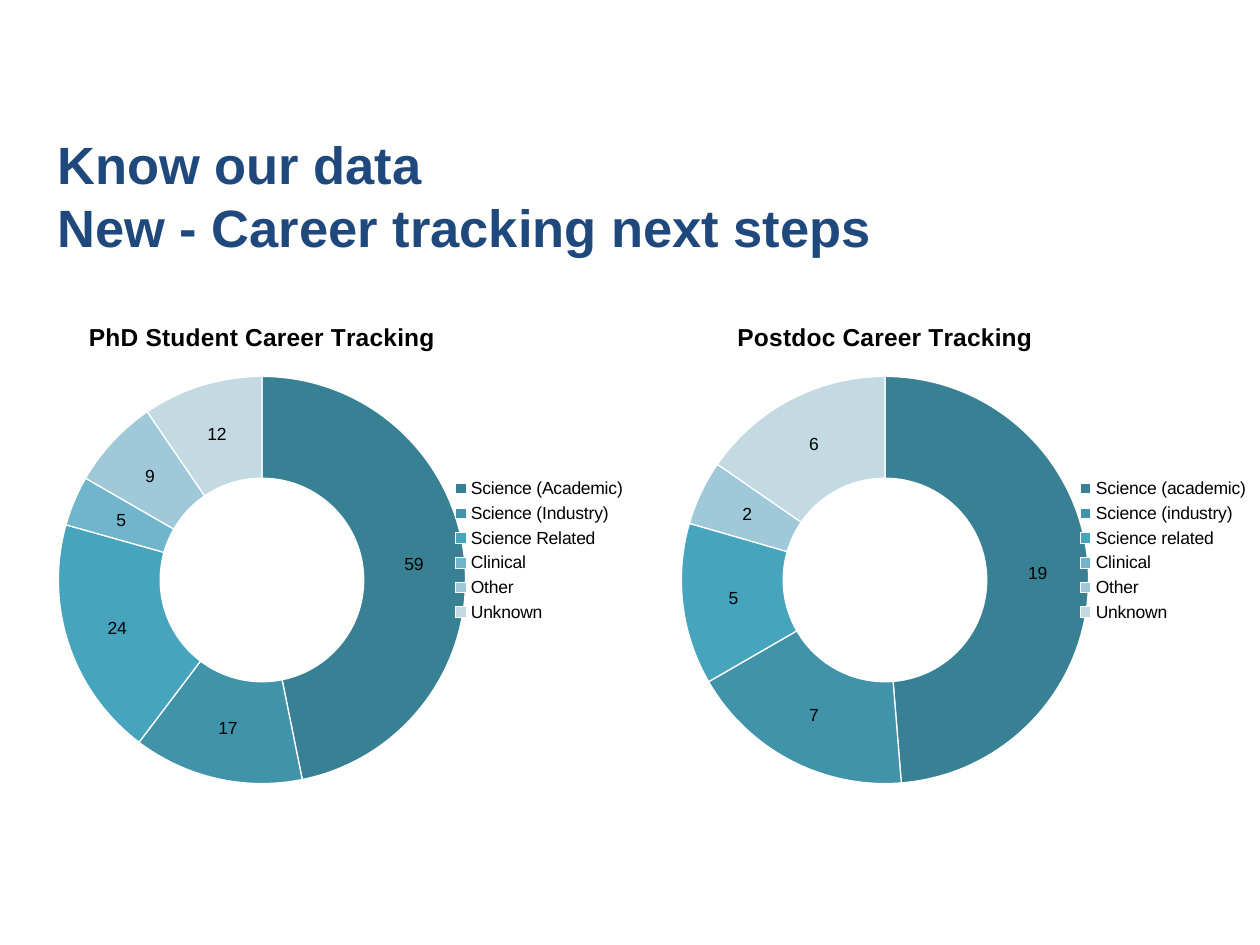
from pptx import Presentation
from pptx.chart.data import CategoryChartData
from pptx.dml.color import RGBColor
from pptx.enum.chart import XL_CHART_TYPE, XL_LEGEND_POSITION
from pptx.enum.text import MSO_ANCHOR
from pptx.util import Emu, Pt

RING = XL_CHART_TYPE.DOUGHNUT
RIGHT = XL_LEGEND_POSITION.RIGHT
TOP = MSO_ANCHOR.TOP
FACE = "Arial"

# Content
HEAD = ["Know our data", "New - Career tracking next steps"]
RINGS = [
    ("PhD Student Career Tracking",
     ["Science (Academic)", "Science (Industry)", "Science Related",
      "Clinical", "Other", "Unknown"],
     [59, 17, 24, 5, 9, 12]),
    ("Postdoc Career Tracking",
     ["Science (academic)", "Science (industry)", "Science related",
      "Clinical", "Other", "Unknown"],
     [19, 7, 5, None, 2, 6]),
]
SHADES = ["388194", "4093A9", "46A4BD", "70B5CC", "9FC8D8", "C3DAE3"]

# Layout in px, 126 to the inch
LEFT, STEP, ROW = -115, 623, 300
WIDE, HIGH = 754, 501


def px(n):
    return Emu(n * 914400 // 126)


def color(code):
    return RGBColor.from_string(code)


def style(font, size, code, bold=False):
    font.name = FACE
    font.size = Pt(size)
    font.bold = bold
    font.color.rgb = color(code)


def add_head(slide):
    box = slide.shapes.add_textbox(px(45), px(126), px(1169), px(179))
    frame = box.text_frame
    frame.word_wrap = True
    frame.vertical_anchor = TOP
    para = frame.paragraphs[0]
    para.line_spacing = Pt(36)
    style(para.font, 30, "1F497D", True)
    for i, line in enumerate(HEAD):
        if i:
            para.add_line_break()
        para.add_run().text = line


def add_ring(slide, left, title, names, counts):
    data = CategoryChartData()
    data.categories = names
    data.add_series("Series 1", counts)
    chart = slide.shapes.add_chart(
        RING, px(left), px(ROW), px(WIDE), px(HIGH), data).chart
    style(chart.font, 10, "000000")

    # Title and legend
    chart.has_title = True
    para = chart.chart_title.text_frame.paragraphs[0]
    para.text = title
    style(para.font, 14, "000000", True)
    chart.chart_title.include_in_layout = False
    chart.has_legend = True
    chart.legend.position = RIGHT
    chart.legend.include_in_layout = True
    style(chart.legend.font, 10, "000000")

    # Slices and their values
    plot = chart.plots[0]
    plot.vary_by_categories = True
    plot.has_data_labels = True
    labels = plot.data_labels
    labels.show_value = True
    labels.show_percentage = False
    style(labels.font, 10, "000000")
    for i, shade in enumerate(SHADES):
        look = plot.series[0].points[i].format
        look.fill.solid()
        look.fill.fore_color.rgb = color(shade)
        look.line.color.rgb = color("FFFFFF")
        look.line.width = Pt(0.75)


def main():
    deck = Presentation()
    deck.slide_width, deck.slide_height = px(1260), px(945)
    slide = deck.slides.add_slide(deck.slide_layouts[6])
    for i, ring in enumerate(RINGS):
        add_ring(slide, LEFT + i * STEP, *ring)
    add_head(slide)
    deck.save("out.pptx")


if __name__ == "__main__":
    main()
